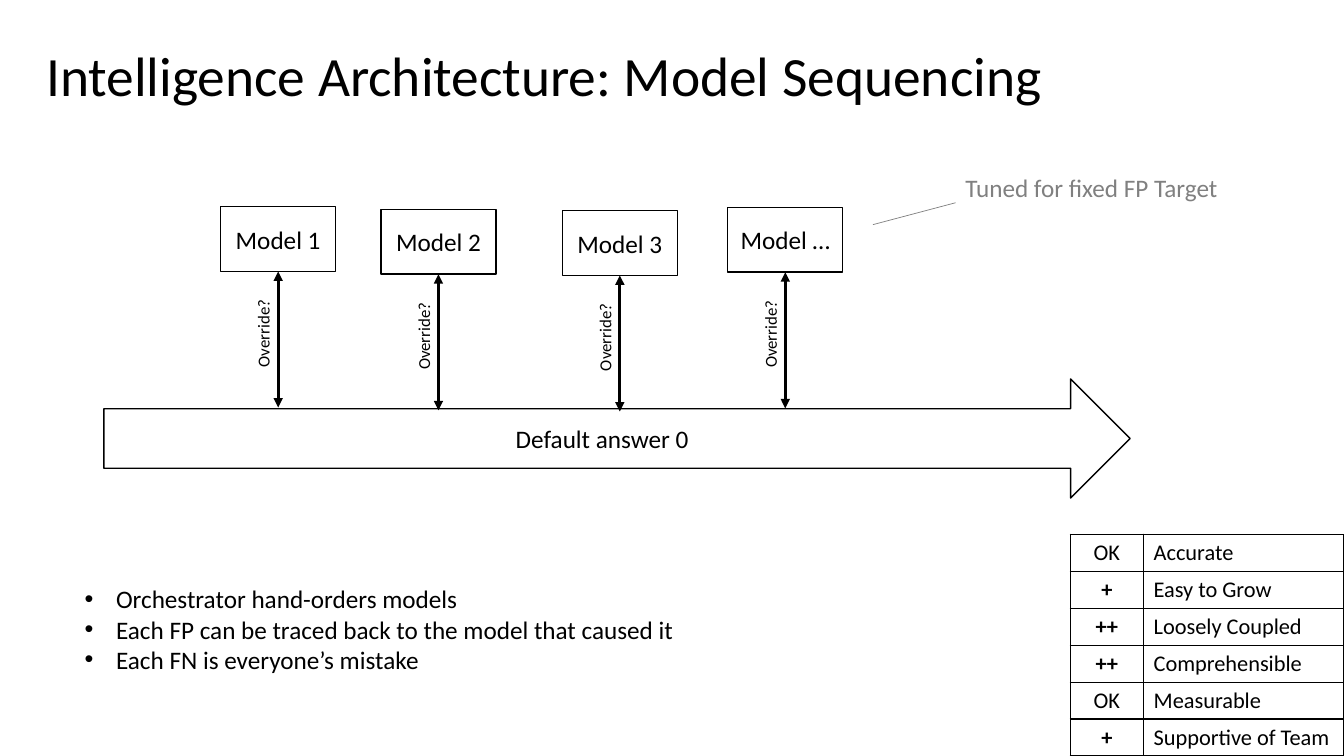
import lxml.etree
import pptx
import pptx.dml.color
import pptx.enum.shapes
import pptx.enum.text
import pptx.oxml.ns
import pptx.util

Cm = pptx.util.Cm
Pt = pptx.util.Pt
qn = pptx.oxml.ns.qn
ALIGN = pptx.enum.text.PP_ALIGN
ANCHOR = pptx.enum.text.MSO_ANCHOR
SHAPE = pptx.enum.shapes.MSO_SHAPE
BLACK, WHITE, GREY = "000000", "FFFFFF", "808080"

MODELS = [
    ("Model 1", 5.56, 5.21),
    ("Model 2", 9.6, 5.28),
    ("Model 3", 14.17, 5.31),
    ("Model …", 18.34, 5.23),
]
RATINGS = ["OK", "+", "++", "++", "OK", "+"]
QUALITIES = ["Accurate", "Easy to Grow", "Loosely Coupled",
             "Comprehensible", "Measurable", "Supportive of Team"]
REMARKS = ["Orchestrator hand-orders models",
           "Each FP can be traced back to the model that caused it",
           "Each FN is everyone’s mistake"]


def rgb(hex_code):
    """Return the colour for a hex string."""
    return pptx.dml.color.RGBColor.from_string(hex_code)


def add_run(p, text, size, color=BLACK, bold=False, align=ALIGN.LEFT):
    """Add a formatted run to a paragraph."""
    p.alignment = align
    r = p.add_run()
    r.text = text
    r.font.name = "Calibri"
    r.font.size = Pt(size)
    r.font.bold = bold
    r.font.color.rgb = rgb(color)


def place(sp, left, top, width, height):
    """Move and size a shape, in centimetres."""
    sp.left, sp.top, sp.width, sp.height = map(Cm, (left, top, width, height))


def add_outlined(s, kind, text, *box):
    """Draw a white shape with a black outline and centred text."""
    sp = s.shapes.add_shape(kind, *map(Cm, box))
    sp.shadow.inherit = False
    sp.fill.solid()
    sp.fill.fore_color.rgb = rgb(WHITE)
    sp.line.color.rgb = rgb(BLACK)
    sp.line.width = Pt(1)
    sp.text_frame.vertical_anchor = ANCHOR.MIDDLE
    add_run(sp.text_frame.paragraphs[0], text, 18, align=ALIGN.CENTER)


def add_line(s, x1, y1, x2, y2, color, width, arrows=False):
    """Draw a straight line, with arrowheads at both ends if asked."""
    kind = pptx.enum.shapes.MSO_CONNECTOR.STRAIGHT
    c = s.shapes.add_connector(kind, *map(Cm, (x1, y1, x2, y2)))
    c.line.color.rgb = rgb(color)
    c.line.width = Pt(width)
    spPr = c._element.spPr
    if arrows:
        for end in ("a:headEnd", "a:tailEnd"):
            lxml.etree.SubElement(spPr.find(qn("a:ln")), qn(end), type="triangle")
    lxml.etree.SubElement(spPr, qn("a:effectLst"))


def add_label(s, text, size, color, *box):
    """Add a one-line text box that does not wrap."""
    sp = s.shapes.add_textbox(*map(Cm, box))
    sp.text_frame.word_wrap = False
    add_run(sp.text_frame.paragraphs[0], text, size, color)
    return sp


def add_title(s, text, *box):
    """Fill the title placeholder."""
    sp = s.shapes.title
    place(sp, *box)
    tf = sp.text_frame
    tf.vertical_anchor = ANCHOR.MIDDLE
    p = tf.paragraphs[0]
    p.line_spacing = 0.9
    add_run(p, text, 39.6)


def add_model(s, name, left, top, width=2.9, height=1.63):
    """Draw a model box with its override arrow below."""
    add_outlined(s, SHAPE.RECTANGLE, name, left, top, width, height)
    center, bottom = left + width / 2, top + height
    add_line(s, center, bottom + 3.43, center, bottom, BLACK, 2.25, arrows=True)
    sp = add_label(s, "Override?", 12, BLACK, left - 0.05, bottom + 1.16, 2.24, 0.76)
    sp.rotation = 270


def add_callout(s, left, top, width, height):
    """Add the grey note and its leader line."""
    add_line(s, left - 2.08, top + 1.44, left, top + 0.89, GREY, 0.5)
    add_label(s, "Tuned for fixed FP Target", 18, GREY, left, top, width, height)


def add_column(s, texts, align, left, top, width, height):
    """Draw a bordered table of one column, with plus ratings in bold."""
    frame = s.shapes.add_table(len(texts), 1, *map(Cm, (left, top, width, height)))
    table = frame.table
    table.first_row = table.horz_banding = False
    for row, text in zip(table.rows, texts):
        row.height = Cm(height / len(texts))
        cell = row.cells[0]
        tcPr = cell._tc.get_or_add_tcPr()
        for side in ("a:lnL", "a:lnR", "a:lnT", "a:lnB"):
            ln = lxml.etree.SubElement(tcPr, qn(side), w=str(Pt(1)))
            fill = lxml.etree.SubElement(ln, qn("a:solidFill"))
            lxml.etree.SubElement(fill, qn("a:srgbClr"), val=BLACK)
        cell.fill.background()
        add_run(cell.text_frame.paragraphs[0], text, 16,
                bold=text.startswith("+"), align=align)


def add_scorecard(s, left, top, width, height, rating_width=1.85):
    """Place the ratings beside the qualities they rate."""
    add_column(s, QUALITIES, ALIGN.LEFT, left + rating_width, top,
               width - rating_width, height)
    add_column(s, RATINGS, ALIGN.CENTER, left, top, rating_width, height)


def add_remarks(s, *box):
    """Fill the body placeholder with the bullet list."""
    sp = s.placeholders[1]
    place(sp, *box)
    tf = sp.text_frame
    tf.auto_size = pptx.enum.text.MSO_AUTO_SIZE.NONE
    tf.vertical_anchor = ANCHOR.TOP
    for i, text in enumerate(REMARKS):
        p = tf.add_paragraph() if i else tf.paragraphs[0]
        p.space_before = Pt(0)
        pPr = p._p.get_or_add_pPr()
        pPr.set("marL", str(Cm(0.79)))
        pPr.set("indent", str(Cm(-0.79)))
        lxml.etree.SubElement(pPr, qn("a:buFont"), typeface="Arial")
        lxml.etree.SubElement(pPr, qn("a:buChar"), char="•")
        add_run(p, text, 18)


def main():
    """Build the slide and save it."""
    prs = pptx.Presentation()
    prs.slide_width, prs.slide_height = Cm(33.87), Cm(19.05)
    s = prs.slides.add_slide(prs.slide_layouts[1])
    add_title(s, "Intelligence Architecture: Model Sequencing", 0.91, 1.02, 30.61, 1.9)
    add_outlined(s, SHAPE.RIGHT_ARROW, "Default answer 0", 2.62, 9.55, 25.86, 3)
    for name, left, top in MODELS:
        add_model(s, name, left, top)
    add_scorecard(s, 26.97, 13.46, 6.9, 5.59)
    add_callout(s, 24.08, 4.22, 6.96, 1.02)
    add_remarks(s, 1.88, 14.58, 16.79, 2.57)
    prs.save("out.pptx")


if __name__ == "__main__":
    main()
